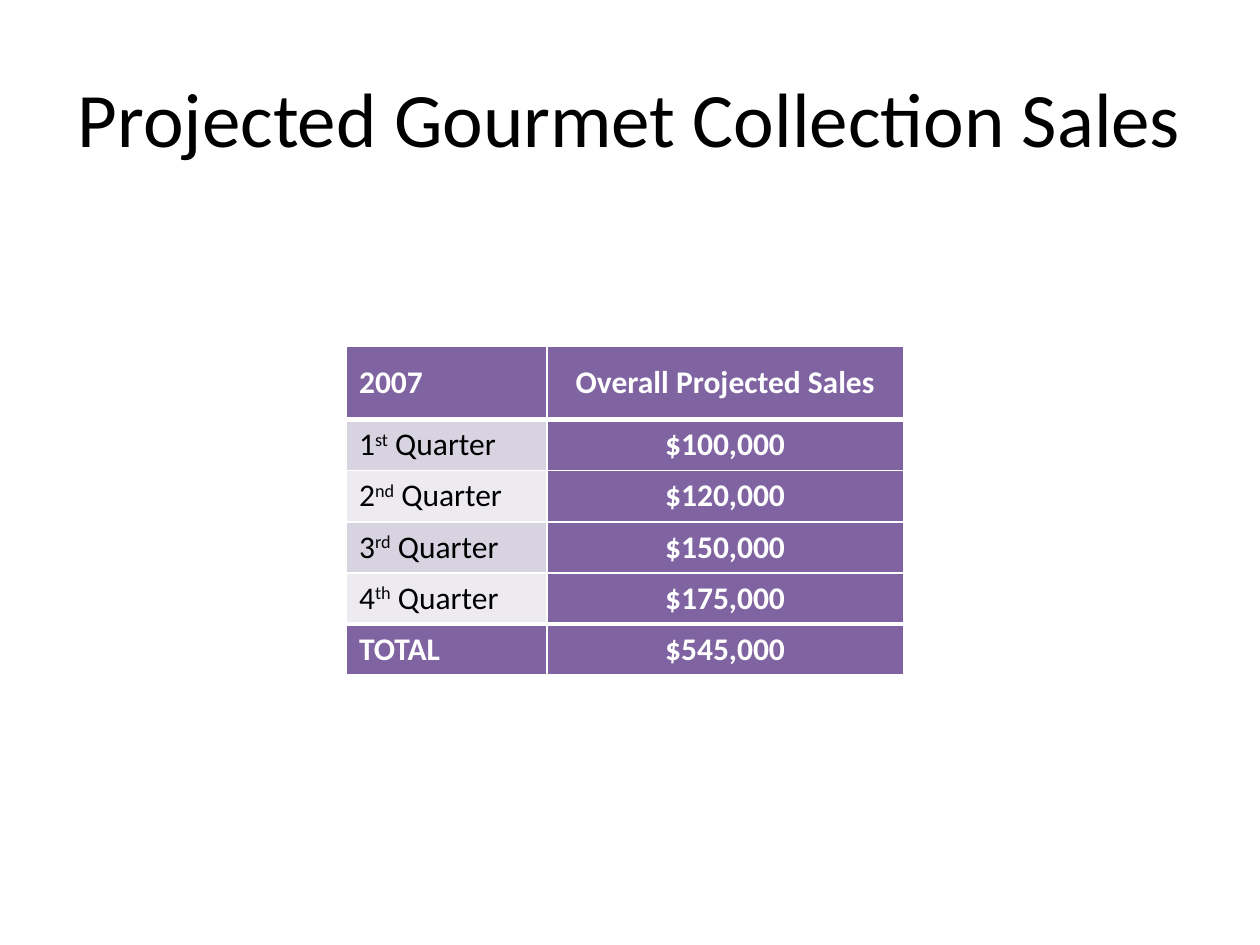
from dataclasses import dataclass

from lxml.etree import SubElement
from pptx import Presentation
from pptx.dml.color import RGBColor
from pptx.enum.text import MSO_ANCHOR, PP_ALIGN
from pptx.oxml.ns import qn
from pptx.util import Inches, Pt


@dataclass(frozen=True)
class Theme:
    """Colours, font and type sizes of the slide."""
    font: str = "Calibri"
    title_size: int = 44
    table_size: int = 18
    ink: str = "000000"
    paper: str = "FFFFFF"
    accent: str = "8064A2"
    bands: tuple = ("D8D3E0", "EDEAF0")
    thin: int = 1
    thick: int = 3


THEME = Theme()
TITLE = "Projected Gourmet Collection Sales"
TITLE_BOX = (0.5, 0.3, 9, 1.25)
TABLE_BOX = (2.75, 2.75, 4.42, 2.58)
LABEL_SHARE = 0.36
HEADER_HEIGHT = 0.58
SALES = [
    (("2007",), "Overall Projected Sales"),
    (("1", "st", " Quarter"), "$100,000"),
    (("2", "nd", " Quarter"), "$120,000"),
    (("3", "rd", " Quarter"), "$150,000"),
    (("4", "th", " Quarter"), "$175,000"),
    (("TOTAL",), "$545,000"),
]


def style_paragraph(paragraph, size, color, bold, alignment):
    """Set the font and alignment of a whole paragraph."""
    paragraph.alignment = alignment
    paragraph.font.name = THEME.font
    paragraph.font.size = Pt(size)
    paragraph.font.bold = bold
    paragraph.font.color.rgb = RGBColor.from_string(color)


def set_borders(cell, top, bottom):
    """Draw white cell borders with the given top and bottom widths."""
    properties = cell._tc.get_or_add_tcPr()
    widths = {"L": THEME.thin, "R": THEME.thin, "T": top, "B": bottom}
    for side, width in widths.items():
        line = SubElement(properties, qn(f"a:ln{side}"), w=str(Pt(width)))
        fill = SubElement(line, qn("a:solidFill"))
        SubElement(fill, qn("a:srgbClr"), val=THEME.paper)


def fill_cell(cell, pieces, fill, color, bold, alignment):
    """Write text pieces, raising the second one, and colour the cell."""
    paragraph = cell.text_frame.paragraphs[0]
    style_paragraph(paragraph, THEME.table_size, color, bold, alignment)
    for position, text in enumerate(pieces):
        run = paragraph.add_run()
        run.text = text
        if position == 1:
            run.font._element.set("baseline", "30000")
    cell.fill.solid()
    cell.fill.fore_color.rgb = RGBColor.from_string(fill)


def add_title(slide, box):
    """Place the slide title in its placeholder."""
    title = slide.shapes.title
    title.left, title.top, title.width, title.height = map(Inches, box)
    title.text_frame.text = TITLE
    title.text_frame.vertical_anchor = MSO_ANCHOR.MIDDLE
    style_paragraph(title.text_frame.paragraphs[0], THEME.title_size,
                    THEME.ink, False, PP_ALIGN.CENTER)


def add_sales_table(slide, box):
    """Place the sales table with header, banded quarters and total."""
    left, top, width, height = box
    last = len(SALES) - 1
    table = slide.shapes.add_table(len(SALES), 2, *map(Inches, box)).table
    table.columns[0].width = Inches(width * LABEL_SHARE)
    table.columns[1].width = Inches(width * (1 - LABEL_SHARE))
    for index, (label, amount) in enumerate(SALES):
        is_header = index == 0
        is_quarter = 0 < index < last
        table.rows[index].height = Inches(
            HEADER_HEIGHT if is_header else (height - HEADER_HEIGHT) / last)
        for cell in table.rows[index].cells:
            set_borders(cell,
                        THEME.thick if index in (1, last) else THEME.thin,
                        THEME.thick if index in (0, last - 1) else THEME.thin)
            if is_header:
                cell.vertical_anchor = MSO_ANCHOR.MIDDLE
        band = THEME.bands[(index - 1) % 2]
        fill_cell(table.cell(index, 0), label,
                  band if is_quarter else THEME.accent,
                  THEME.ink if is_quarter else THEME.paper,
                  not is_quarter, PP_ALIGN.LEFT)
        fill_cell(table.cell(index, 1), (amount,), THEME.accent,
                  THEME.paper, True, PP_ALIGN.CENTER)


def main():
    """Build and save the presentation."""
    presentation = Presentation()
    presentation.slide_width = Inches(10)
    presentation.slide_height = Inches(7.5)
    slide = presentation.slides.add_slide(presentation.slide_layouts[5])
    add_title(slide, TITLE_BOX)
    add_sales_table(slide, TABLE_BOX)
    presentation.save("out.pptx")


if __name__ == "__main__":
    main()
